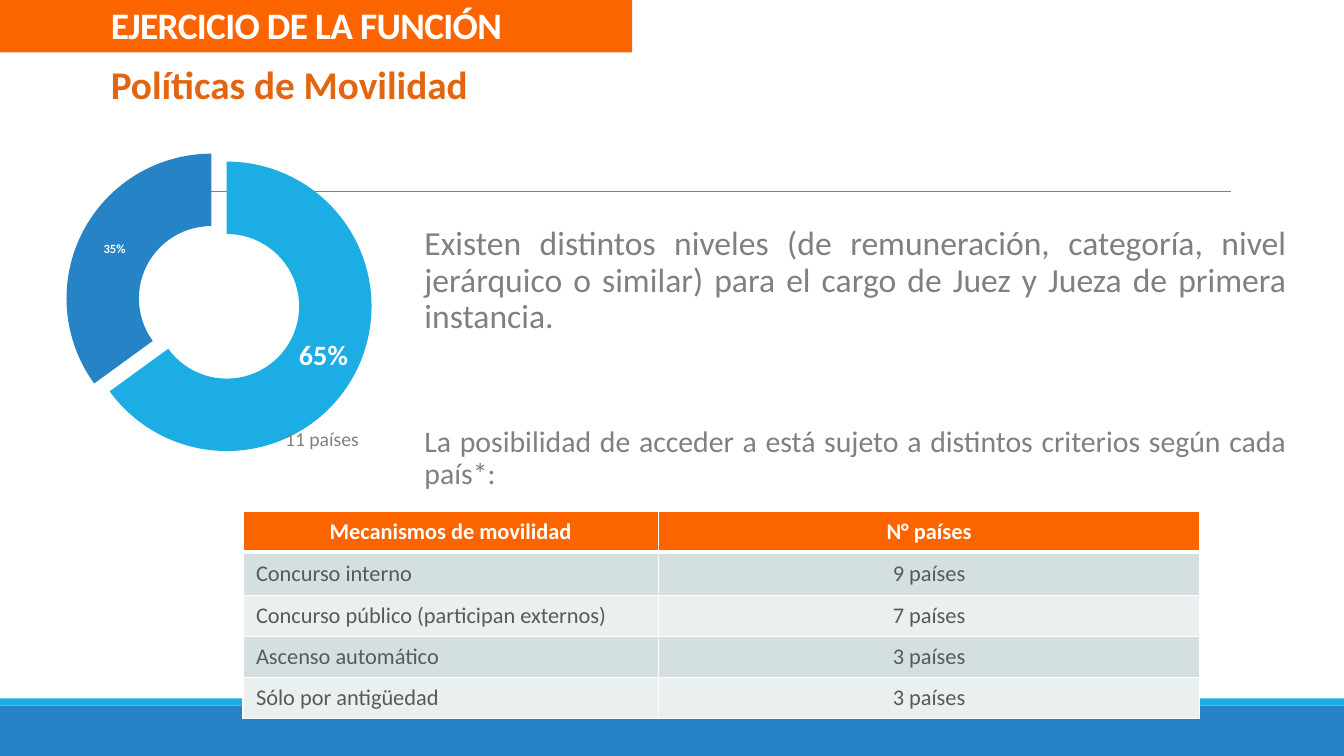
from lxml import etree
from pptx import Presentation
from pptx import util as u
from pptx.chart import data as chart_data
from pptx.dml.color import RGBColor
from pptx.enum import chart as charts, shapes, text
from pptx.oxml import ns

FONT = "Calibri"
ORANGE, BLUE, SKY, GREY, WHITE = "FC6400", "2683C6", "1CADE4", "808080", "FFFFFF"
BAND_FILLS = ["D3E0DF", "EAF0F0"]

WIDTH, HEIGHT = 13.33, 7.5
TITLE = "EJERCICIO DE LA FUNCIÓN"
SUBTITLE = "Políticas de Movilidad"
COUNTRIES = "11 países"
# wording, size, space before
BODY = [
    ("Existen distintos niveles (de remuneración, categoría, nivel jerárquico o similar) "
     "para el cargo de Juez y Jueza de primera instancia.", 24, 0),
    ("La posibilidad de acceder a está sujeto a distintos criterios según cada país*: ", 21.3, 65),
]
MECHANISMS = [
    ("Mecanismos de movilidad", "N° países"),
    ("Concurso interno", "9 países"),
    ("Concurso público (participan externos)", "7 países"),
    ("Ascenso automático", "3 países"),
    ("Sólo por antigüedad", "3 países"),
]
COLUMN_WIDTHS = [4.12, 5.37]
ROW_HEIGHTS = [0.4, 0.43, 0.4, 0.4, 0.4]
# share, colour, label size
SLICES = [(65, SKY, 20), (35, BLUE, 9)]


def color(value):
    return RGBColor.from_string(value)


def inches(*lengths):
    return [u.Inches(length) for length in lengths]


def style(font, size, fill, bold=False):
    font.name, font.size, font.bold = FONT, u.Pt(size), bold
    font.color.rgb = color(fill)


def add_span(para, wording, size, fill, bold=False):
    span = para.add_run()
    span.text = wording
    style(span.font, size, fill, bold)
    return span


def add_label(page, place, wording, size, fill, bold=False):
    box = page.shapes.add_textbox(*inches(*place))
    box.text_frame.word_wrap = False
    add_span(box.text_frame.paragraphs[0], wording, size, fill, bold)


def add_backdrop(page):
    for top, height, fill in [(7, 0.5, BLUE), (6.93, 0.07, SKY)]:
        bar = page.shapes.add_shape(shapes.MSO_SHAPE.RECTANGLE, *inches(0, top, WIDTH, height))
        bar.shadow.inherit = False
        bar.fill.solid()
        bar.fill.fore_color.rgb = color(fill)
        bar.line.fill.background()
    rule = page.shapes.add_connector(shapes.MSO_CONNECTOR.STRAIGHT, *inches(1.31, 1.9, 12.21, 1.9))
    rule.line.color.rgb = color(GREY)
    rule.line.width = u.Pt(0.5)
    etree.SubElement(rule._element.spPr, ns.qn("a:effectLst"))


def add_title(page):
    title = page.shapes.title
    title.left, title.top, title.width, title.height = inches(0, 0, 6.27, 0.52)
    title.fill.solid()
    title.fill.fore_color.rgb = color(ORANGE)
    frame = title.text_frame
    frame.margin_left = u.Inches(1.1)
    frame.vertical_anchor = text.MSO_ANCHOR.BOTTOM
    frame.auto_size = text.MSO_AUTO_SIZE.NONE
    para = frame.paragraphs[0]
    para.alignment = text.PP_ALIGN.LEFT
    para.line_spacing = 0.85
    span = add_span(para, TITLE, 26.7, WHITE, True)
    span.font._element.set("spc", "-50")


def add_body(page):
    box = page.shapes.add_textbox(*inches(4.21, 2.2, 8.55, 2.8))
    frame = box.text_frame
    frame.word_wrap = True
    frame.margin_left = frame.margin_right = 0
    for index, (wording, size, gap) in enumerate(BODY):
        para = frame.add_paragraph() if index else frame.paragraphs[0]
        para.alignment = text.PP_ALIGN.JUSTIFY
        para.line_spacing = 0.9
        para.space_before = u.Pt(gap)
        add_span(para, wording, size, GREY)


def set_borders(cell, bottom):
    """Draw white cell edges, one point wide except for the bottom one."""
    properties = cell._tc.get_or_add_tcPr()
    for index, (side, width) in enumerate([("L", 1), ("R", 1), ("T", 1), ("B", bottom)]):
        edge = etree.Element(ns.qn("a:ln" + side), w=str(u.Pt(width)))
        fill = etree.SubElement(edge, ns.qn("a:solidFill"))
        etree.SubElement(fill, ns.qn("a:srgbClr"), val=WHITE)
        properties.insert(index, edge)


def add_mechanisms(page):
    place = inches(2.41, 5.07, sum(COLUMN_WIDTHS), sum(ROW_HEIGHTS))
    table = page.shapes.add_table(len(MECHANISMS), len(COLUMN_WIDTHS), *place).table
    for column, width in zip(table.columns, COLUMN_WIDTHS):
        column.width = u.Inches(width)
    for row, height in zip(table.rows, ROW_HEIGHTS):
        row.height = u.Inches(height)
    for r, wordings in enumerate(MECHANISMS):
        header = r == 0
        for c, wording in enumerate(wordings):
            cell = table.cell(r, c)
            cell.fill.solid()
            cell.fill.fore_color.rgb = color(ORANGE if header else BAND_FILLS[(r - 1) % 2])
            cell.margin_left = cell.margin_right = u.Inches(0.13)
            cell.margin_top = cell.margin_bottom = u.Inches(0.07)
            cell.vertical_anchor = text.MSO_ANCHOR.TOP if header else text.MSO_ANCHOR.MIDDLE
            para = cell.text_frame.paragraphs[0]
            para.alignment = text.PP_ALIGN.CENTER if header or c else text.PP_ALIGN.LEFT
            add_span(para, wording, 16, WHITE if header else "595959", header)
            set_borders(cell, 3 if header else 1)


def add_doughnut(page):
    shares = chart_data.CategoryChartData()
    shares.categories = [str(n + 1) for n in range(len(SLICES))]
    shares.add_series("Series 1", [share for share, _, _ in SLICES])
    chart = page.shapes.add_chart(charts.XL_CHART_TYPE.DOUGHNUT_EXPLODED,
                                  *inches(-0.41, 1.34, 5.19, 3.32), shares).chart
    chart.has_legend = chart.has_title = False
    style(chart.font, 10, "000000")
    plot = chart.plots[0]
    plot.vary_by_categories = False
    plot._element.find(ns.qn("c:holeSize")).set("val", "50")
    series = plot.series[0]
    for explosion in series._element.findall(ns.qn("c:explosion")):
        explosion.set("val", "12")
    labels = series.data_labels
    labels.show_percentage, labels.show_value = True, False
    style(labels.font, 9, WHITE, True)
    for index, (_, fill, size) in enumerate(SLICES):
        point = series.points[index]
        point.format.fill.solid()
        point.format.fill.fore_color.rgb = color(fill)
        point.format.line.fill.background()
        style(point.data_label.font, size, WHITE, True)
        label = point.data_label._dLbl
        label.find(ns.qn("c:showVal")).set("val", "0")
        label.find(ns.qn("c:showPercent")).set("val", "1")


def main():
    deck = Presentation()
    deck.slide_width, deck.slide_height = inches(WIDTH, HEIGHT)
    page = deck.slides.add_slide(deck.slide_layouts[5])
    add_backdrop(page)
    add_body(page)
    add_mechanisms(page)
    add_title(page)
    add_label(page, (1, 0.55, 3.78, 0.57), SUBTITLE, 28, "E26510", True)
    add_doughnut(page)
    add_label(page, (2.73, 4.19, 0.94, 0.34), COUNTRIES, 14, GREY)
    deck.save("out.pptx")


if __name__ == "__main__":
    main()
